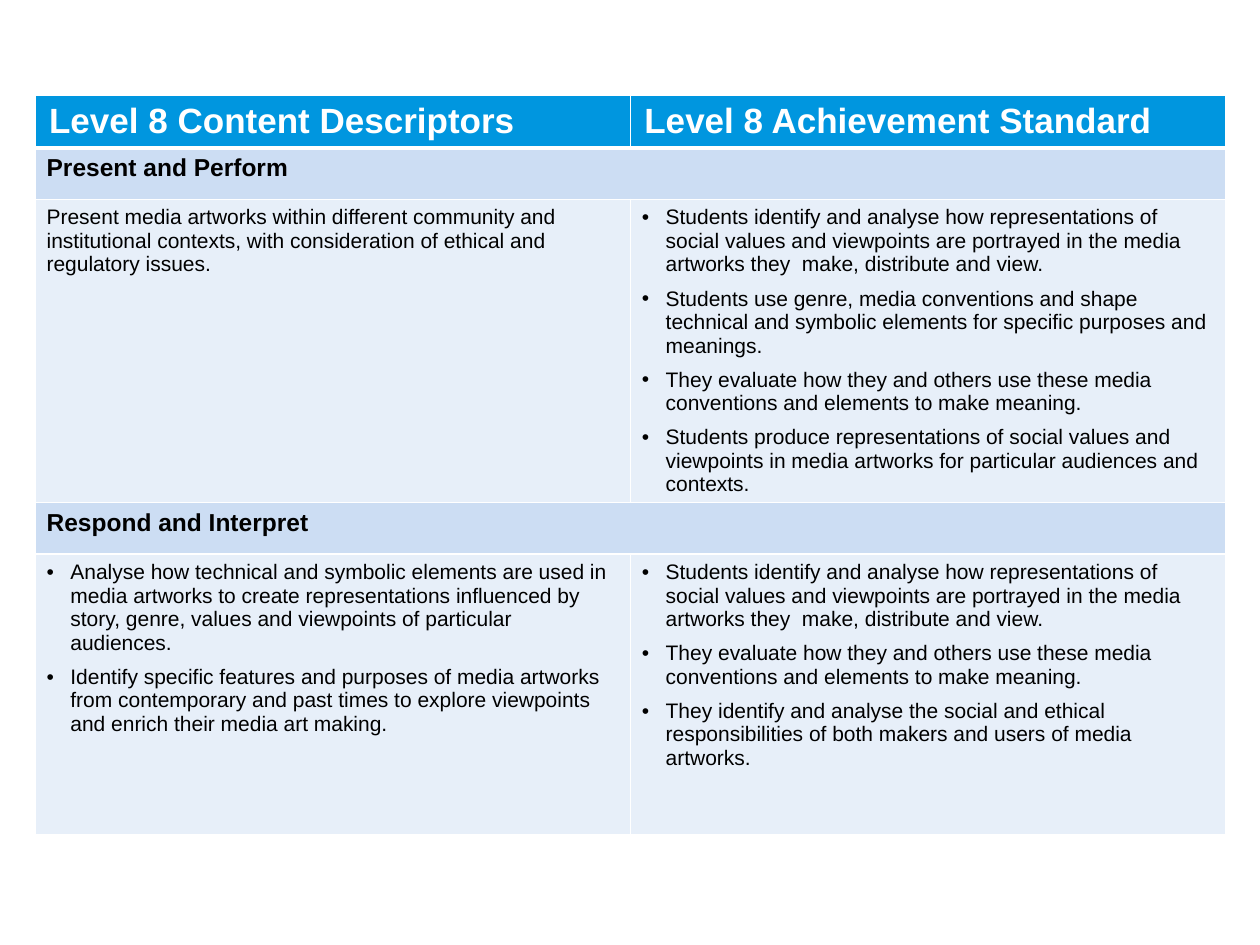
from dataclasses import dataclass

import lxml.etree
import pptx
import pptx.dml.color
import pptx.oxml.ns
import pptx.table
import pptx.util
from pptx.util import Cm

COLORS = {
    "header": "0096DF",
    "section": "CCDDF3",
    "body": "E7EFF9",
    "white": "FFFFFF",
    "black": "000000",
}
FONT = "Arial"
COLUMN_WIDTH = Cm(12)
ROW_HEIGHTS = [Cm(1.05), Cm(1.04), Cm(6.05), Cm(1.04), Cm(5.66)]
BULLET_INDENT = Cm(0.48)


@dataclass(frozen=True)
class CellStyle:
    fill: str
    color: str
    size: int
    bold: bool
    margin: float
    top_line: int = 1
    bottom_line: int = 1


@dataclass(frozen=True)
class CellText:
    lines: tuple[str, ...]
    bulleted: bool = True


@dataclass(frozen=True)
class Section:
    title: str
    descriptors: CellText
    standards: CellText


HEADER = CellStyle("header", "white", 20, True, 0.28, bottom_line=3)
FIRST_SECTION = CellStyle("section", "black", 14, True, 0.23, top_line=3)
SECTION = CellStyle("section", "black", 14, True, 0.23)
BODY = CellStyle("body", "black", 12, False, 0.23)

HEADINGS = ["Level 8 Content Descriptors", "Level 8 Achievement Standard"]
IDENTIFY = (
    "Students identify and analyse how representations of social values and "
    "viewpoints are portrayed in the media artworks they  make, distribute and view."
)
EVALUATE = (
    "They evaluate how they and others use these media conventions and elements "
    "to make meaning."
)
SECTIONS = [
    Section(
        "Present and Perform",
        CellText((
            "Present media artworks within different community and institutional "
            "contexts, with consideration of ethical and regulatory issues.",
        ), bulleted=False),
        CellText((
            IDENTIFY,
            "Students use genre, media conventions and shape technical and symbolic "
            "elements for specific purposes and meanings.",
            EVALUATE,
            "Students produce representations of social values and viewpoints in "
            "media artworks for particular audiences and contexts.",
        )),
    ),
    Section(
        "Respond and Interpret",
        CellText((
            "Analyse how technical and symbolic elements are used in media artworks "
            "to create representations influenced by story, genre, values and "
            "viewpoints of particular audiences.",
            "Identify specific features and purposes of media artworks from "
            "contemporary and past times to explore viewpoints and enrich their "
            "media art making.",
        )),
        CellText((
            IDENTIFY,
            EVALUATE,
            "They identify and analyse the social and ethical responsibilities of "
            "both makers and users of media artworks.",
        )),
    ),
]


def rgb(name: str) -> pptx.dml.color.RGBColor:
    return pptx.dml.color.RGBColor.from_string(COLORS[name])


def add_element(parent, tag: str, **attributes: str):
    return lxml.etree.SubElement(parent, pptx.oxml.ns.qn(tag), attributes)


def set_borders(cell: pptx.table._Cell, style: CellStyle) -> None:
    """Place white lines ahead of the cell's fill, as the schema requires."""
    tc_pr = cell._tc.get_or_add_tcPr()
    widths = {"L": 1, "R": 1, "T": style.top_line, "B": style.bottom_line}
    for index, (side, width) in enumerate(widths.items()):
        ln = add_element(tc_pr, f"a:ln{side}", w=str(pptx.util.Pt(width)))
        add_element(add_element(ln, "a:solidFill"), "a:srgbClr", val=COLORS["white"])
        tc_pr.insert(index, ln)


def style_cell(cell: pptx.table._Cell, style: CellStyle) -> None:
    cell.fill.solid()
    cell.fill.fore_color.rgb = rgb(style.fill)
    set_borders(cell, style)
    cell.margin_left = cell.margin_right = Cm(style.margin)
    cell.margin_top = cell.margin_bottom = Cm(0.13)


def set_bullet(p) -> None:
    p_pr = p._p.get_or_add_pPr()
    p_pr.set("marL", str(BULLET_INDENT))
    p_pr.set("indent", str(-BULLET_INDENT))
    add_element(p_pr, "a:buFont", typeface=FONT)
    add_element(p_pr, "a:buChar", char="•")
    p.space_after = pptx.util.Pt(6)


def fill_cell(cell: pptx.table._Cell, text: CellText, style: CellStyle) -> None:
    style_cell(cell, style)
    tf = cell.text_frame
    tf.text = "\n".join(text.lines)
    for p in tf.paragraphs:
        if text.bulleted:
            set_bullet(p)
        for r in p.runs:
            r.font.name = FONT
            r.font.size = pptx.util.Pt(style.size)
            r.font.bold = style.bold
            r.font.color.rgb = rgb(style.color)


def add_section(table: pptx.table.Table, row: int, section: Section,
                title_style: CellStyle) -> None:
    title, spanned = table.cell(row, 0), table.cell(row, 1)
    title.merge(spanned)
    style_cell(spanned, title_style)
    fill_cell(title, CellText((section.title,), bulleted=False), title_style)
    for column, text in enumerate((section.descriptors, section.standards)):
        fill_cell(table.cell(row + 1, column), text, BODY)


def main() -> None:
    prs = pptx.Presentation()
    prs.slide_width, prs.slide_height = Cm(25.4), Cm(19.05)
    s = prs.slides.add_slide(prs.slide_layouts[6])
    table = s.shapes.add_table(
        len(ROW_HEIGHTS), len(HEADINGS), Cm(0.71), Cm(1.93),
        COLUMN_WIDTH * len(HEADINGS), sum(ROW_HEIGHTS),
    ).table
    table.horz_banding = False
    for column in table.columns:
        column.width = COLUMN_WIDTH
    for row, height in zip(table.rows, ROW_HEIGHTS):
        row.height = height

    for column, heading in enumerate(HEADINGS):
        fill_cell(table.cell(0, column), CellText((heading,), bulleted=False), HEADER)
    for index, section in enumerate(SECTIONS):
        add_section(table, 1 + 2 * index, section, SECTION if index else FIRST_SECTION)

    prs.save("out.pptx")


if __name__ == "__main__":
    main()
